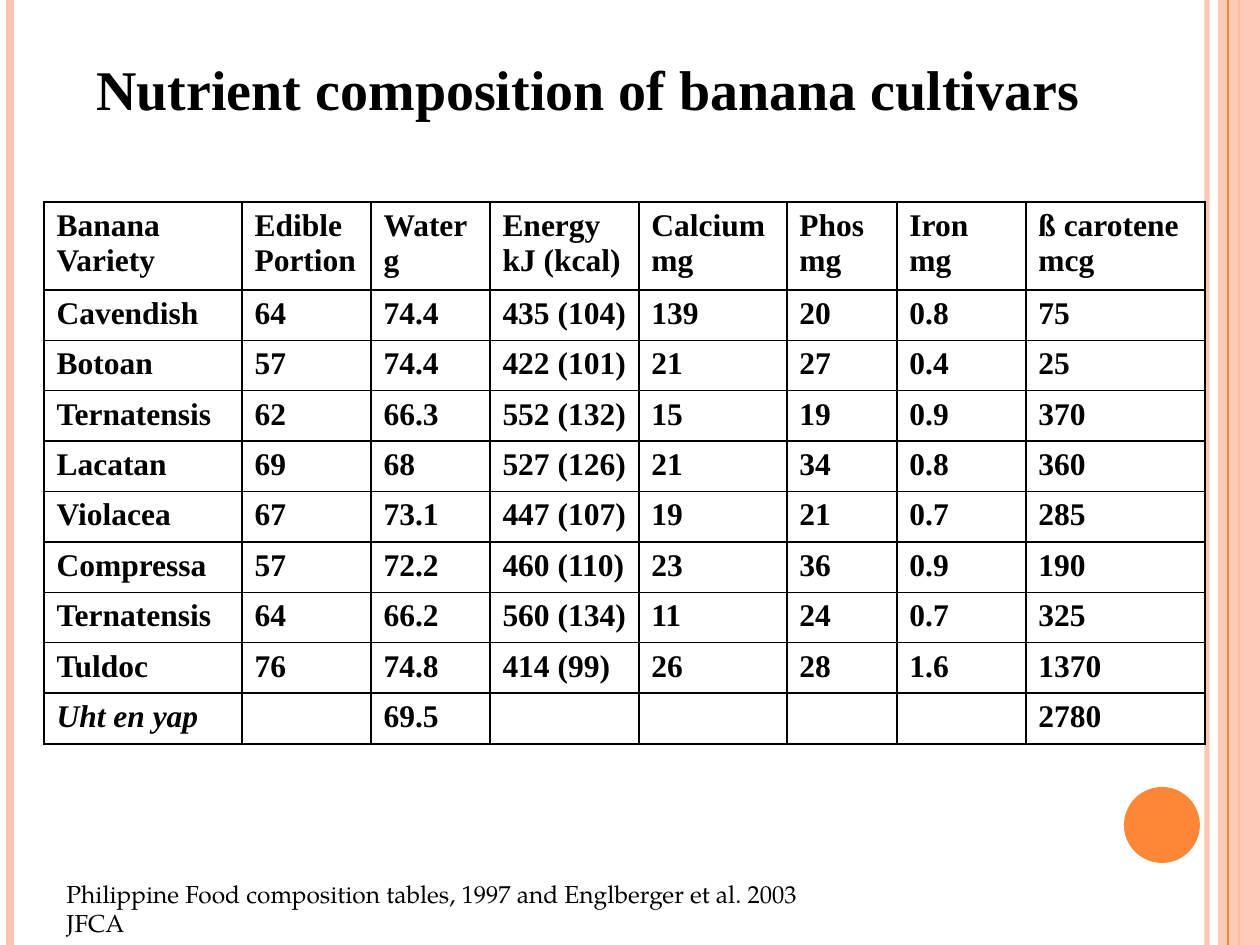
from lxml.etree import SubElement
from pptx import Presentation
from pptx.dml.color import RGBColor
from pptx.enum.shapes import MSO_CONNECTOR as Connector, MSO_SHAPE as Shape
from pptx.enum.text import MSO_ANCHOR as Anchor
from pptx.oxml.ns import qn
from pptx.util import Emu, Pt

PX = 914400 / 126
WIDTH, HEIGHT = 1260, 945
COLORS = {"ink": "000000", "peach": "FEC3AE", "orange": "FE8637"}
SERIF, BOOK = "Times New Roman", "TeX Gyre Pagella"


def px(value):
    return Emu(round(value * PX))


def rgb(name):
    return RGBColor.from_string(COLORS[name])


def set_alpha(fill_parent, percent):
    color = next(fill_parent.iter(qn("a:srgbClr")))
    SubElement(color, qn("a:alpha"), val=str(percent * 1000))


class SlideBuilder:
    def __init__(self, slide):
        self.slide = slide
        self.shapes = slide.shapes

    def style(self, paragraph, text, **formats):
        run = paragraph.add_run()
        run.text = text
        run.font.color.rgb = rgb("ink")
        for key, value in formats.items():
            setattr(run.font, key, value)

    def stripe(self, x, color, points, alpha=100):
        line = self.shapes.add_connector(
            Connector.STRAIGHT, px(x), 0, px(x), px(HEIGHT))
        line.line.color.rgb = rgb(color)
        line.line.width = Pt(points)
        properties = line._element.spPr
        if alpha < 100:
            set_alpha(properties, alpha)
        SubElement(properties, qn("a:effectLst"))

    def block(self, kind, box, color, alpha=100):
        shape = self.shapes.add_shape(kind, *map(px, box))
        shape.shadow.inherit = False
        shape.fill.solid()
        shape.fill.fore_color.rgb = rgb(color)
        shape.line.fill.background()
        if alpha < 100:
            set_alpha(shape._element.spPr, alpha)

    def text(self, box, content, **formats):
        frame = self.shapes.add_textbox(*map(px, box)).text_frame
        frame.word_wrap = True
        frame.vertical_anchor = Anchor.MIDDLE
        self.style(frame.paragraphs[0], content, **formats)

    def borders(self, cell):
        properties = cell._tc.get_or_add_tcPr()
        for position, side in enumerate(("lnL", "lnR", "lnT", "lnB")):
            edge = SubElement(properties, qn(f"a:{side}"), w=str(Pt(1)))
            fill = SubElement(edge, qn("a:solidFill"))
            SubElement(fill, qn("a:srgbClr"), val=COLORS["ink"])
            properties.insert(position, edge)

    def table(self, box, widths, header_height, rows, italic_names, **formats):
        table = self.shapes.add_table(
            len(rows), len(widths), *map(px, box)).table
        table.first_row = table.horz_banding = False
        for column, width in zip(table.columns, widths):
            column.width = px(width)
        body_height = (box[3] - header_height) / (len(rows) - 1)
        for i, values in enumerate(rows):
            table.rows[i].height = px(body_height if i else header_height)
            for j, value in enumerate(values):
                cell = table.cell(i, j)
                cell.fill.background()
                self.borders(cell)
                frame = cell.text_frame
                for n, line in enumerate(value.split("\n") if value else []):
                    paragraph = frame.add_paragraph() if n else frame.paragraphs[0]
                    self.style(paragraph, line, italic=value in italic_names,
                               **formats)


NUTRIENTS = [
    ("Banana Variety", "Edible Portion", "Water\ng", "Energy kJ (kcal)",
     "Calcium\nmg", "Phos\nmg", "Iron\nmg", "ß carotene\nmcg"),
    ("Cavendish", "64", "74.4", "435 (104)", "139", "20", "0.8", "75"),
    ("Botoan", "57", "74.4", "422 (101)", "21", "27", "0.4", "25"),
    ("Ternatensis", "62", "66.3", "552 (132)", "15", "19", "0.9", "370"),
    ("Lacatan", "69", "68", "527 (126)", "21", "34", "0.8", "360"),
    ("Violacea", "67", "73.1", "447 (107)", "19", "21", "0.7", "285"),
    ("Compressa", "57", "72.2", "460 (110)", "23", "36", "0.9", "190"),
    ("Ternatensis", "64", "66.2", "560 (134)", "11", "24", "0.7", "325"),
    ("Tuldoc", "76", "74.8", "414 (99)", "26", "28", "1.6", "1370"),
    ("Uht en yap", "", "69.5", "", "", "", "", "2780"),
]
COLUMN_WIDTHS = (198, 129, 119, 149, 148, 110, 129, 179)


def main():
    deck = Presentation()
    deck.slide_width, deck.slide_height = px(WIDTH), px(HEIGHT)
    builder = SlideBuilder(deck.slides.add_slide(deck.slide_layouts[6]))

    # Edge stripes and accent circle
    builder.stripe(1207, "peach", 3, alpha=93)
    builder.stripe(10, "peach", 4.5)
    builder.stripe(1239, "orange", 1.5)
    builder.block(Shape.RECTANGLE, (1218, 0, 42, HEIGHT), "peach", alpha=87)
    builder.stripe(1228, "orange", 0.75)
    builder.block(Shape.OVAL, (1124, 787, 76, 76), "orange")

    # Nutrient table
    builder.table((44, 202, sum(COLUMN_WIDTHS), 542), COLUMN_WIDTHS, 88,
                  NUTRIENTS, {"Uht en yap"},
                  name=SERIF, size=Pt(18), bold=True)

    # Source and title
    builder.text((54, 887, 764, 42),
                 "Philippine Food composition tables, 1997 and "
                 "Englberger et al. 2003 JFCA", name=BOOK, size=Pt(14))
    builder.text((84, 48, 1016, 80), "Nutrient composition of banana cultivars",
                 name=SERIF, size=Pt(32), bold=True)

    deck.save("out.pptx")


if __name__ == "__main__":
    main()
